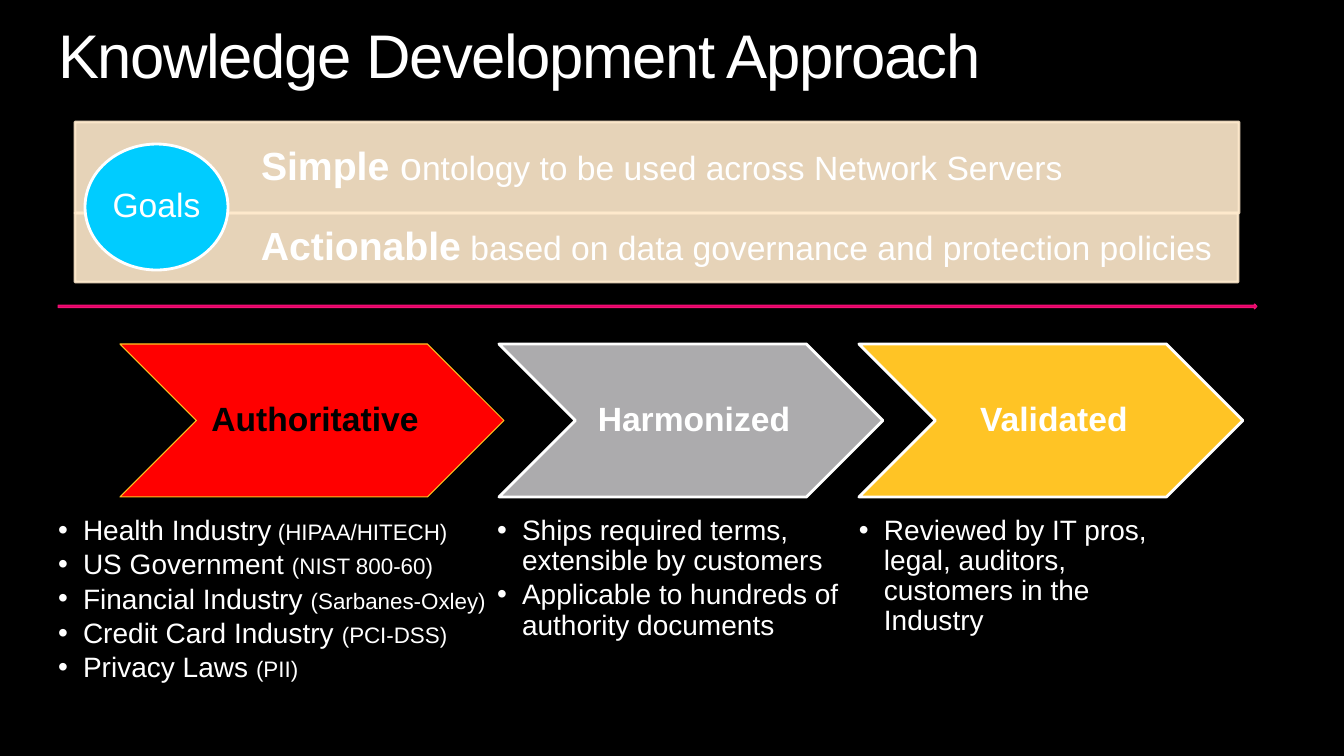
from lxml import etree
from pptx import Presentation
from pptx.dml.color import RGBColor
from pptx.enum.shapes import MSO_SHAPE
from pptx.enum.text import MSO_ANCHOR, MSO_AUTO_SIZE, PP_ALIGN
from pptx.oxml.ns import qn
from pptx.util import Pt

RECT, OVAL = MSO_SHAPE.RECTANGLE, MSO_SHAPE.OVAL
CHEVRON, ARROW = MSO_SHAPE.CHEVRON, MSO_SHAPE.RIGHT_ARROW
TOP, MIDDLE = MSO_ANCHOR.TOP, MSO_ANCHOR.MIDDLE
LEFT, CENTER = PP_ALIGN.LEFT, PP_ALIGN.CENTER

EMU_PER_PX = 914400 / 100.8
FONT, WHITE, BLACK, CREAM = "Arial", "FFFFFF", "000000", "FFEACD"

# Content: each run is (text, size, bold)
TITLE = "Knowledge Development Approach"
GOALS = [  # top, width, height, runs
    (122, 1164, 91, [("Simple", 28, True), (" o", 28, False),
                     ("ntology to be used across Network Servers", 24, False)]),
    (213, 1163, 69, [("Actionable", 28, True),
                     (" based on data governance and protection policies", 24, False)]),
]
STAGES = [  # label, chevron left, fill, line, line width, text colour
    ("Authoritative", 120, "FF0000", "FFC21F", 0.75, BLACK),
    ("Harmonized", 499, "ACABAD", WHITE, 2, WHITE),
    ("Validated", 859, "FFC425", WHITE, 2, WHITE),
]
LISTS = [  # placeholder index, left, width, (item, note) pairs
    (1, 58, 431, [("Health Industry", " (HIPAA/HITECH)"),
                  ("US Government ", "(NIST 800-60)"),
                  ("Financial Industry ", "(Sarbanes-Oxley)"),
                  ("Credit Card Industry ", "(PCI-DSS)"),
                  ("Privacy Laws ", "(PII)")]),
    (2, 497, 345, [("Ships required terms, extensible by customers", ""),
                   ("Applicable to hundreds of authority documents", "")]),
    (4, 859, 306, [("Reviewed by IT pros, legal, auditors, customers in the Industry", "")]),
]


def px(n):
    return round(n * EMU_PER_PX)


def rgb(color):
    return RGBColor.from_string(color)


def place(sp, left, top, width, height):
    sp.left, sp.top, sp.width, sp.height = px(left), px(top), px(width), px(height)


def set_frame(tf, anchor, margins=(0, 0, 0, 0)):
    tf.word_wrap = True
    tf.auto_size = MSO_AUTO_SIZE.NONE
    tf.vertical_anchor = anchor
    tf.margin_left, tf.margin_top, tf.margin_right, tf.margin_bottom = map(px, margins)


def write(p, runs, color=WHITE, align=LEFT):
    p.alignment = align
    p.line_spacing = 0.9
    p.space_before = Pt(0)
    for text, size, bold in runs:
        r = p.add_run()
        r.text = text
        r.font.name, r.font.size, r.font.bold = FONT, Pt(size), bold
        r.font.color.rgb = rgb(color)


def add_shape(kind, box, fill, line, line_width):
    sp = s.shapes.add_shape(kind, *map(px, box))
    sp.shadow.inherit = False
    sp.fill.solid()
    sp.fill.fore_color.rgb = rgb(fill)
    sp.line.color.rgb = rgb(line)
    sp.line.width = Pt(line_width)
    return sp


def set_bullet(p):
    pPr = p._p.get_or_add_pPr()
    pPr.set("marL", str(px(25)))
    pPr.set("indent", str(-px(25)))
    etree.SubElement(pPr, qn("a:buFont"), typeface=FONT)
    etree.SubElement(pPr, qn("a:buChar"), char="•")


prs = Presentation()
prs.slide_width, prs.slide_height = px(1344), px(756)
s = prs.slides.add_slide(prs.slide_layouts.get_by_name("Comparison"))
s.background.fill.solid()
s.background.fill.fore_color.rgb = rgb(BLACK)
holders = {ph.placeholder_format.idx: ph for ph in s.placeholders}

# Title
title = s.shapes.title
place(title, 58, 25, 1229, 68)
set_frame(title.text_frame, TOP)
p = title.text_frame.paragraphs[0]
write(p, [(TITLE, 44, False)])
p.runs[0].font._element.set("spc", "-100")

# Goal bars
for top, width, height, runs in GOALS:
    bar = add_shape(RECT, (75, top, width, height), CREAM, CREAM, 2)
    for clr in bar._element.spPr.iter(qn("a:srgbClr")):
        etree.SubElement(clr, qn("a:alpha"), val="90000")
    set_frame(bar.text_frame, MIDDLE, (186, 0, 0, 0))
    write(bar.text_frame.paragraphs[0], runs)

# Goals badge
badge = add_shape(OVAL, (85, 144, 143, 126), "00CCFF", WHITE, 2)
set_frame(badge.text_frame, MIDDLE)
write(badge.text_frame.paragraphs[0], [("Goals", 24, False)], align=CENTER)

# Divider arrow
divider = add_shape(ARROW, (58, 304, 1199, 5), "C40057", "ED1374", 0.75)
divider.fill.gradient()
divider.fill.gradient_angle = 90
start, end = divider.fill.gradient_stops
start.color.rgb, end.color.rgb = rgb("C40057"), rgb("FE0071")
start.position, end.position = 0, 0.8

# Stage chevrons
for label, left, fill, line, line_width, color in STAGES:
    stage = add_shape(CHEVRON, (left, 344, 384, 153), fill, line, line_width)
    set_frame(stage.text_frame, MIDDLE, (10, 4, 4, 4))
    write(stage.text_frame.paragraphs[0], [(label, 24, True)], color, CENTER)

# Lists under the stages
for idx, left, width, items in LISTS:
    body = holders[idx]
    place(body, left, 516, width, 166)
    tf = body.text_frame
    set_frame(tf, TOP)
    for i, (item, note) in enumerate(items):
        p = tf.add_paragraph() if i else tf.paragraphs[0]
        set_bullet(p)
        runs = [(item, 20, False)]
        if note:
            runs.append((note, 16, False))
        write(p, runs)
        p.space_after = Pt(3)

# Unused placeholder
unused = holders[3]._element
unused.getparent().remove(unused)

prs.save("out.pptx")
